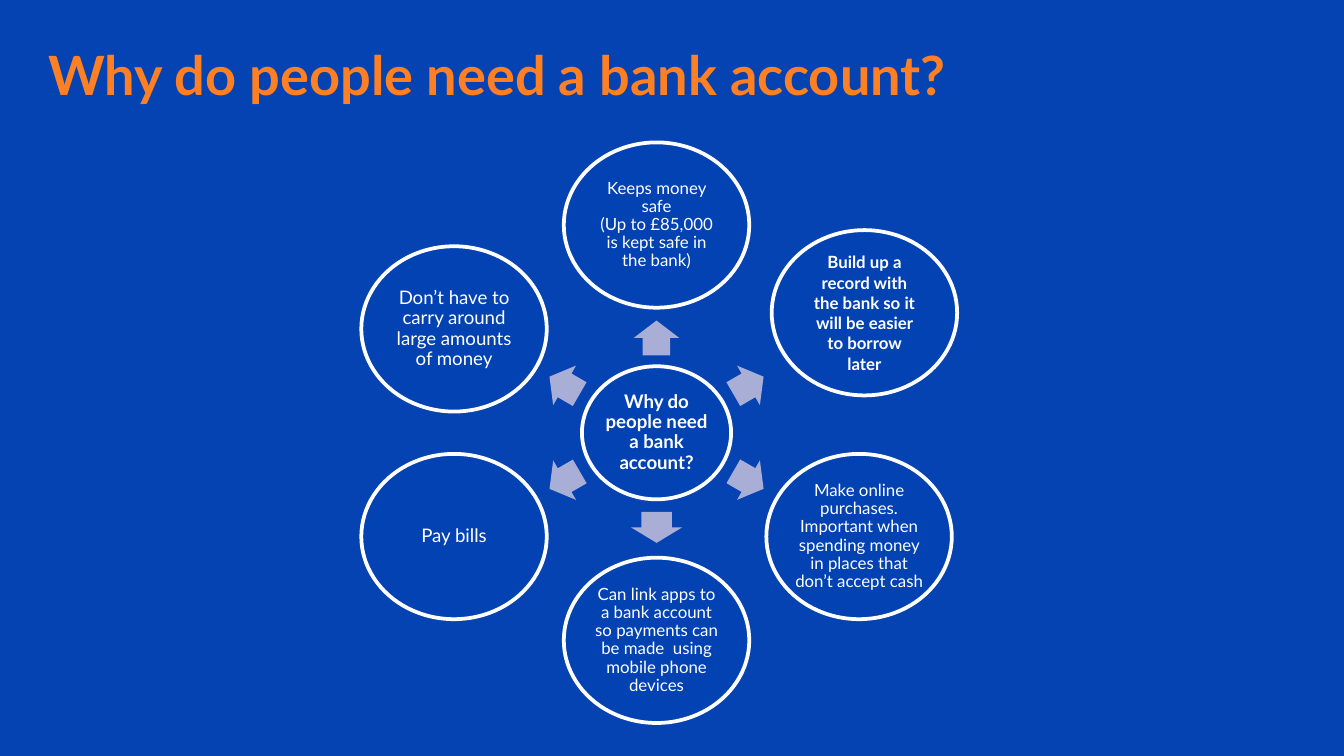
"""Build a radial slide on why people need a bank account."""
from math import cos, radians, sin

from pptx import Presentation
from pptx import util as u
from pptx.dml.color import RGBColor
from pptx.enum import shapes, text

COLORS = {"bg": "0543B3", "title": "FF8022", "disc": "0242B3", "white": "FFFFFF", "arrow": "A8AED5"}
TITLE = "Why do people need a bank account?"
RING = [
    (270, 9, False, 0.03, ["Keeps money safe", "(Up to £85,000 is kept safe in the bank)"]),
    (330, 9, True, 0.1, ["Build up a record with the bank so it will be easier to borrow later"]),
    (30, 9, False, 0.01, ["Make online purchases.",
                          "Important when spending money in places that don’t accept cash"]),
    (90, 9, False, 0.01, ["Can link apps to a bank account so payments can be made  using mobile phone devices"]),
    (150, 10, False, 0.01, ["Pay bills"]),
    (210, 10, False, 0.01, ["Don’t have to carry around large amounts of money"]),
]

prs = Presentation()
prs.slide_width = u.Inches(10)
prs.slide_height = prs.slide_width * 9 // 16
col = prs.slide_width / 100
s = prs.slides.add_slide(prs.slide_layouts[6])
s.background.fill.solid()
s.background.fill.fore_color.rgb = RGBColor.from_string(COLORS["bg"])


def add_shape(kind, cx, cy, w, h, color):
    sp = s.shapes.add_shape(kind, *(round(v * col) for v in (cx - w / 2, cy - h / 2, w, h)))
    sp.shadow.inherit = False
    sp.fill.solid()
    sp.fill.fore_color.rgb = RGBColor.from_string(COLORS[color])
    sp.line.fill.background()
    return sp


def add_text(sp, lines, size, color, bold, inset, align, spacing):
    tf = sp.text_frame
    tf.word_wrap = True
    tf.vertical_anchor = text.MSO_ANCHOR.MIDDLE
    tf.margin_left = tf.margin_right = tf.margin_top = tf.margin_bottom = u.Inches(inset)
    for i, line in enumerate(lines):
        p = tf.paragraphs[0] if i == 0 else tf.add_paragraph()
        p.alignment = align
        p.line_spacing = spacing
        r = p.add_run()
        r.text = line
        r.font.name, r.font.size, r.font.bold = "Lato", u.Pt(size), bold
        r.font.color.rgb = RGBColor.from_string(COLORS[color])


title = s.shapes.add_textbox(*(round(v * col) for v in (2.6, 2.7, 84.6, 5.6)))
add_text(title, [TITLE], 29, "title", True, 0.1, text.PP_ALIGN.LEFT, 1.0)

hub_x, hub_y = 48.85, 32.2
discs = [(hub_x, hub_y, 11.1, 9.9, 10, True, 0.01, [TITLE])]
for angle, size, bold, inset, lines in RING:
    dx, dy = cos(radians(angle)), sin(radians(angle))
    w, h = (2.3, 3.8) if angle == 90 else (2.6, 3.4)
    arrow = add_shape(shapes.MSO_SHAPE.RIGHT_ARROW, hub_x + 7.9 * dx, hub_y + 7.05 * dy, w, h, "arrow")
    arrow.adjustments[0], arrow.adjustments[1] = 0.6, 0.5
    arrow.rotation = angle
    shift_x, shift_y = (0.4, -1.2) if angle == 330 else (0, 0)
    discs.append((hub_x + 17.4 * dx + shift_x, hub_y + 15.45 * dy + shift_y,
                  13.8, 12.3, size, bold, inset, lines))

for cx, cy, w, h, size, bold, inset, lines in discs:
    disc = add_shape(shapes.MSO_SHAPE.OVAL, cx, cy, w, h, "disc")
    disc.line.color.rgb = RGBColor.from_string(COLORS["white"])
    disc.line.width = u.Pt(2)
    add_text(disc, lines, size, "white", bold, inset, text.PP_ALIGN.CENTER, 1.0 if inset == 0.1 else 0.9)

prs.save("out.pptx")
